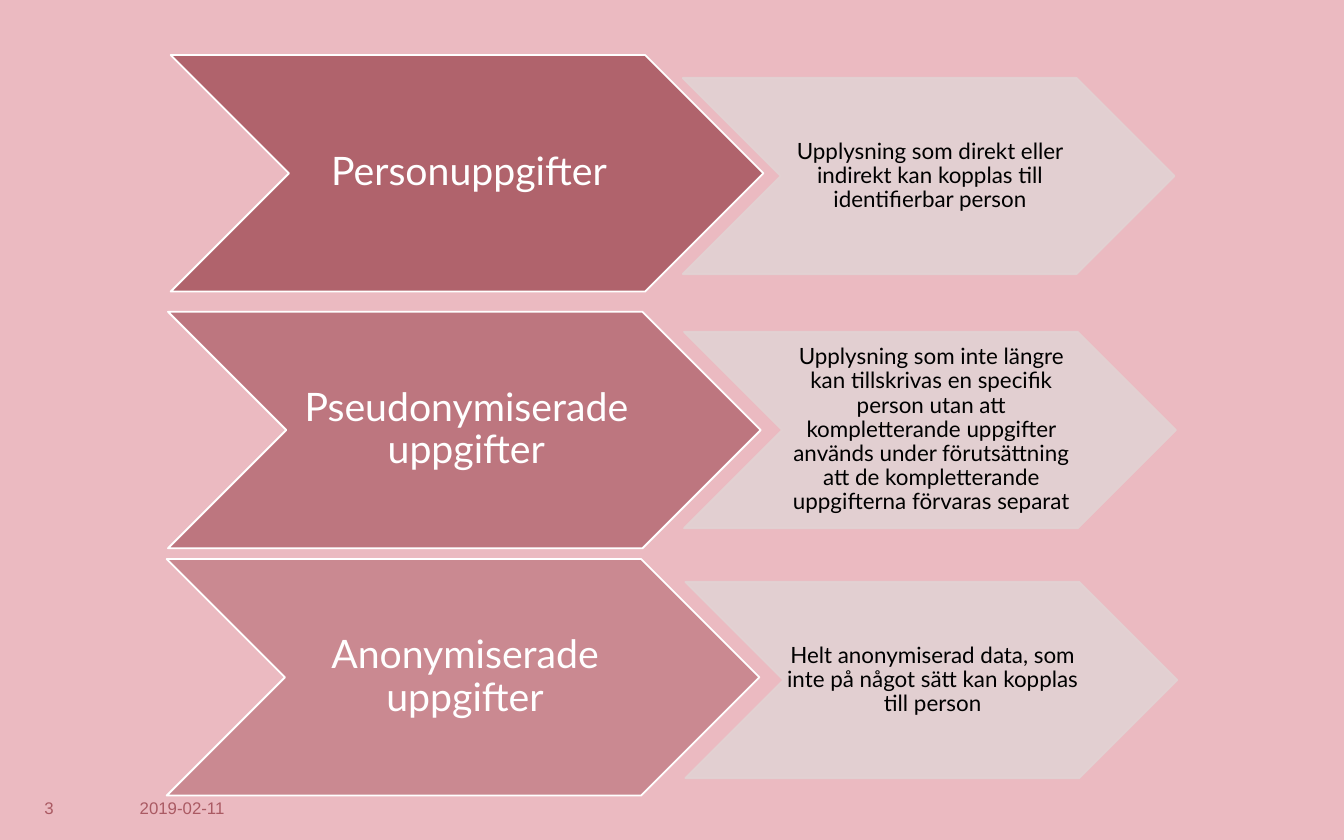
from lxml import etree
from pptx import Presentation
from pptx import util as u
from pptx.dml.color import RGBColor
from pptx.enum import shapes, text
from pptx.oxml.ns import qn

WIDE, HIGH = u.Inches(10), u.Inches(6.25)
CELL = WIDE / 100
HEX = {"back": "EBBAC1", "rose": "AA5A63", "pale": "E2D2D3", "white": "FFFFFF", "black": "000000"}
BIG, SMALL = (44.1, 17.6), (36.6, 14.6)
ROWS = [
    ((12.7, 4.1), 90, "Personuppgifter", (50.8, 5.8),
     "Upplysning som direkt eller indirekt kan kopplas till identifierbar person"),
    ((12.5, 23.2), 70, "Pseudonymiserade uppgifter", (50.9, 24.7),
     "Upplysning som inte längre kan tillskrivas en specifik person utan att "
     "kompletterande uppgifter används under förutsättning att de "
     "kompletterande uppgifterna förvaras separat"),
    ((12.4, 41.6), 50, "Anonymiserade uppgifter", (51, 43.3),
     "Helt anonymiserad data, som inte på något sätt kan kopplas till person"),
]


def grid(*cells):
    """Turn grid cells into lengths."""
    return [u.Emu(round(c * CELL)) for c in cells]


def paint(fill, hue, part=100):
    """Fill with a named colour at a percentage of opacity."""
    fill.solid()
    fill.fore_color.rgb = RGBColor.from_string(HEX[hue])
    if part < 100:
        tint = fill._xPr.find(qn("a:solidFill"))[0]
        etree.SubElement(tint, qn("a:alpha")).set("val", str(part * 1000))


def label(slide, spot, words, face, size, hue, pads=(0, 0, 0, 0), mid=False):
    """Add a wrapped, vertically centred text box."""
    frame = slide.shapes.add_textbox(*grid(*spot)).text_frame
    frame.word_wrap = True
    frame.vertical_anchor = text.MSO_ANCHOR.MIDDLE
    frame.margin_left, frame.margin_top, frame.margin_right, frame.margin_bottom = grid(*pads)
    para = frame.paragraphs[0]
    para.text = words
    if mid:
        para.alignment = text.PP_ALIGN.CENTER
        para.line_spacing = 0.9
    para.font.name, para.font.size = face, u.Pt(size)
    para.font.color.rgb = RGBColor.from_string(HEX[hue])


def arrow(slide, spot, size, fill, edge, words, font, pad):
    """Add a chevron with its text between the notch and the point."""
    (left, top), (wide, high) = spot, size
    shape = slide.shapes.add_shape(shapes.MSO_SHAPE.CHEVRON, *grid(left, top, wide, high))
    shape.shadow.inherit = False
    paint(shape.fill, *fill)
    paint(shape.line.fill, *edge)
    shape.line.width = u.Pt(1)
    label(slide, (left + high / 2, top, wide - high, high), words, "Lato", *font,
          pads=(pad, 0.1, 0, 0.1), mid=True)


def main():
    """Build the slide."""
    deck = Presentation()
    deck.slide_width, deck.slide_height = WIDE, HIGH
    slide = deck.slides.add_slide(deck.slide_layouts[6])
    paint(slide.background.fill, "back")
    label(slide, (10.4, 59.3, 9.3, 1.6), "2019-02-11", "Arial", 9, "rose")
    for spot, part, term, side, note in ROWS:
        arrow(slide, spot, BIG, ("rose", part), ("white",), term, (21, "white"), 0.3)
        arrow(slide, side, SMALL, ("pale", 90), ("pale", 90), note, (12, "black"), 0.2)
    label(slide, (3.3, 59.3, 6.1, 1.6), "3", "Arial", 9, "rose")
    deck.save("out.pptx")


if __name__ == "__main__":
    main()
